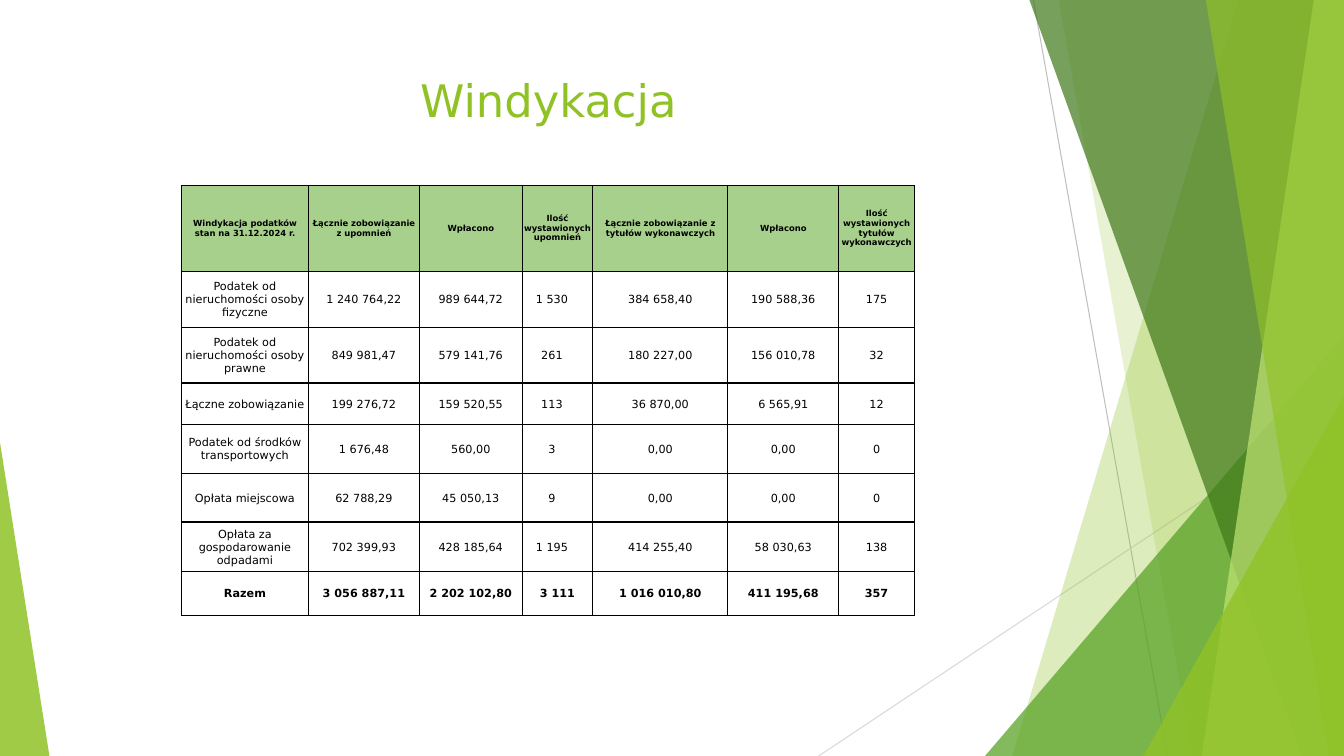
from lxml.etree import SubElement
from pptx import Presentation
from pptx.dml.color import RGBColor
from pptx.enum.shapes import MSO_CONNECTOR, MSO_SHAPE
from pptx.enum.text import MSO_ANCHOR, PP_ALIGN
from pptx.oxml.ns import qn
from pptx.util import Inches, Pt

WIDTH, HEIGHT = 13.33, 7.5
FONT = "DejaVu Sans"
GREEN, HEADER_GREEN, BLACK = "90C226", "A8D08D", "000000"

TITLE = "Windykacja"
HEADINGS = [
    "Windykacja podatków stan na 31.12.2024 r.",
    "Łącznie zobowiązanie z upomnień",
    "Wpłacono",
    "Ilość wystawionych upomnień",
    "Łącznie zobowiązanie z tytułów wykonawczych",
    "Wpłacono",
    "Ilość wystawionych tytułów wykonawczych",
]
TAXES = [
    ["Podatek od nieruchomości osoby fizyczne", "1 240 764,22", "989 644,72", "1 530", "384 658,40", "190 588,36", "175"],
    ["Podatek od nieruchomości osoby prawne", "849 981,47", "579 141,76", "261", "180 227,00", "156 010,78", "32"],
    ["Łączne zobowiązanie", "199 276,72", "159 520,55", "113", "36 870,00", "6 565,91", "12"],
    ["Podatek od środków transportowych", "1 676,48", "560,00", "3", "0,00", "0,00", "0"],
    ["Opłata miejscowa", "62 788,29", "45 050,13", "9", "0,00", "0,00", "0"],
    ["Opłata za gospodarowanie odpadami", "702 399,93", "428 185,64", "1 195", "414 255,40", "58 030,63", "138"],
]
TOTAL = ["Razem", "3 056 887,11", "2 202 102,80", "3 111", "1 016 010,80", "411 195,68", "357"]
BLANK = [""] * len(HEADINGS)
ROWS = [BLANK, HEADINGS, BLANK, *TAXES, TOTAL]
HEADER_ROWS = 3
REMINDER_COLUMN = 3
COLUMN_WIDTHS = [1.26, 1.1, 1.02, 0.7, 1.34, 1.1, 0.75]
ROW_HEIGHTS = [0.2, 0.44, 0.21, 0.56, 0.55, 0.41, 0.49, 0.48, 0.49, 0.44]

LINES = [
    ((10.25, 0), (11.58, HEIGHT), "BFBFBF"),
    ((WIDTH, 4.03), (8.12, HEIGHT), "D9D9D9"),
]
FACETS = [
    ("band", 12.28, 10.04, GREEN, 30),
    ("band", 10.5, 11.83, GREEN, 20),
    ("triangle", (9.77, 3.33, 3.56, 4.17), 1, "54A021", 72),
    ("band", 10.21, 12.91, "3F7819", 70),
    ("band", 13.03, 11.92, "C0E474", 70),
    ("band", 11.96, 13.18, GREEN, 65),
    ("triangle", (11.34, 3.93, 1.99, 3.57), 1, GREEN, 80),
    ("triangle", (0, 4.39, 0.49, 3.11), 0, GREEN, 85),
]


def paint(color_format, hex_color):
    color_format.rgb = RGBColor.from_string(hex_color)


def set_format(target, values):
    for name, value in values.items():
        setattr(target, name, value)


def write(para, text, size, color, bold=False):
    para.alignment = PP_ALIGN.CENTER
    span = para.add_run()
    span.text = text
    set_format(span.font, {"name": FONT, "size": Pt(size), "bold": bold})
    paint(span.font.color, color)


def add_line(page, start, end, color):
    line = page.shapes.add_connector(
        MSO_CONNECTOR.STRAIGHT, *[Inches(value) for value in (*start, *end)])
    line.line.width = Pt(0.75)
    paint(line.line.color, color)
    SubElement(line._element.spPr, qn("a:effectLst"))


def add_band(page, top_x, bottom_x):
    corners = [(top_x, 0), (WIDTH, 0), (WIDTH, HEIGHT), (bottom_x, HEIGHT)]
    points = [(Inches(x), Inches(y)) for x, y in corners]
    builder = page.shapes.build_freeform(*points[0])
    builder.add_line_segments(points[1:], close=True)
    return builder.convert_to_shape()


def add_triangle(page, place, apex):
    triangle = page.shapes.add_shape(
        MSO_SHAPE.ISOSCELES_TRIANGLE, *[Inches(value) for value in place])
    triangle.adjustments[0] = apex
    return triangle


def add_facet(page, kind, first, second, color, opacity):
    facet = {"band": add_band, "triangle": add_triangle}[kind](page, first, second)
    facet.shadow.inherit = False
    facet.line.fill.background()
    facet.fill.solid()
    paint(facet.fill.fore_color, color)
    solid = facet._element.spPr.find(qn("a:solidFill"))
    SubElement(solid[0], qn("a:alpha"), val=str(opacity * 1000))


def add_borders(cell, hidden):
    properties = cell._tc.get_or_add_tcPr()
    for position, side in enumerate(("lnL", "lnR", "lnT", "lnB")):
        border = properties.makeelement(qn("a:" + side), {"w": str(Pt(1))})
        if side in hidden:
            SubElement(border, qn("a:noFill"))
        else:
            solid = SubElement(border, qn("a:solidFill"))
            SubElement(solid, qn("a:srgbClr"), val=BLACK)
        properties.insert(position, border)


def fill_cell(cell, row, column, text):
    is_header = row < HEADER_ROWS
    size = 6 if is_header else 8
    is_count = column == REMINDER_COLUMN and HEADER_ROWS <= row < len(ROWS) - 1
    set_format(cell, {
        "margin_left": Inches(0.01),
        "margin_top": Inches(0.01),
        "margin_right": Inches(0.12 if is_count else 0.01),
        "margin_bottom": 0,
        "vertical_anchor": MSO_ANCHOR.MIDDLE,
    })
    para = cell.text_frame.paragraphs[0]
    if text:
        write(para, text, size, BLACK, is_header or row == len(ROWS) - 1)
    else:
        para._p.get_or_add_endParaRPr().set("sz", str(size * 100))
    hidden = []
    if is_header:
        cell.fill.solid()
        paint(cell.fill.fore_color, HEADER_GREEN)
        if row > 0:
            hidden.append("lnT")
        if row < HEADER_ROWS - 1:
            hidden.append("lnB")
    else:
        cell.fill.background()
    add_borders(cell, hidden)


def add_tax_table(page):
    table = page.shapes.add_table(
        len(ROWS), len(HEADINGS), Inches(1.8), Inches(1.84),
        Inches(sum(COLUMN_WIDTHS)), Inches(sum(ROW_HEIGHTS))).table
    set_format(table, {"first_row": False, "horz_banding": False})
    for column, width in zip(table.columns, COLUMN_WIDTHS):
        column.width = Inches(width)
    for row, height in zip(table.rows, ROW_HEIGHTS):
        row.height = Inches(height)
    for row, texts in enumerate(ROWS):
        for column, text in enumerate(texts):
            fill_cell(table.cell(row, column), row, column, text)


def main():
    deck = Presentation()
    set_format(deck, {"slide_width": Inches(WIDTH), "slide_height": Inches(HEIGHT)})
    page = deck.slides.add_slide(deck.slide_layouts[6])
    for line in LINES:
        add_line(page, *line)
    for facet in FACETS:
        add_facet(page, *facet)
    box = page.shapes.add_textbox(Inches(0.74), Inches(0.67), Inches(9.4), Inches(1.44))
    set_format(box.text_frame, {"word_wrap": True, "vertical_anchor": MSO_ANCHOR.TOP})
    write(box.text_frame.paragraphs[0], TITLE, 32, GREEN)
    add_tax_table(page)
    deck.save("out.pptx")


if __name__ == "__main__":
    main()
